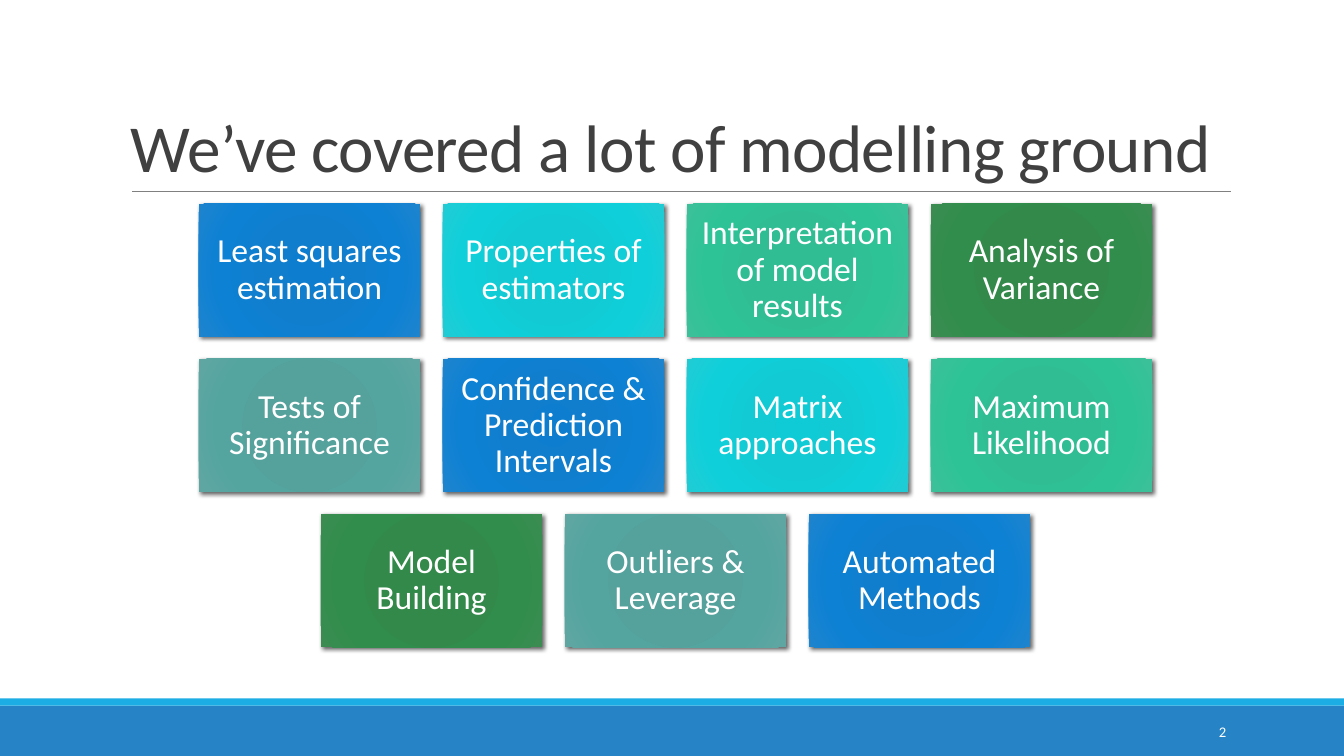
import pptx
import pptx.util
import pptx.dml.color
import pptx.enum.shapes
import pptx.enum.text
import pptx.oxml
import pptx.oxml.ns

Inches = pptx.util.Inches
RGBColor = pptx.dml.color.RGBColor
ALIGN = pptx.enum.text.PP_ALIGN
ANCHOR = pptx.enum.text.MSO_ANCHOR

# Content
HEADING = "We’ve covered a lot of modelling ground"
PAGE_NUMBER = "2"
TOPIC_ROWS = [
    ["Least squares estimation", "Properties of estimators",
     "Interpretation of model results", "Analysis of Variance"],
    ["Tests of Significance", "Confidence & Prediction Intervals",
     "Matrix approaches", "Maximum Likelihood"],
    ["Model Building", "Outliers & Leverage", "Automated Methods"],
]

# Colours: each tile has four gradient shades
FONT = "Calibri"
WHITE = RGBColor(0xFF, 0xFF, 0xFF)
HEADING_GREY = RGBColor(0x40, 0x40, 0x40)
RULE_GREY = RGBColor(0x80, 0x80, 0x80)
FOOTER_BLUE = RGBColor(0x26, 0x83, 0xC6)
STRIPE_BLUE = RGBColor(0x1C, 0xAD, 0xE4)
GRADIENT_STOPS = (0, 34, 70, 100)
TILE_GRADIENTS = [
    [RGBColor.from_string(shade) for shade in shades.split()]
    for shades in (
        "0D7ECF 117ECD 0D81D4 1E84CE",
        "0ECBD5 12CAD3 0FD0DA 20CBD4",
        "2DBE94 30BD94 2EC397 3CC09A",
        "2F8949 32894A 318D4B 3A8C51",
        "52A19C 55A19C 54A5A0 5FA6A2",
    )
]

# Grid, in inches
SLIDE_W, SLIDE_H = 13.33, 7.5
TILE_W, TILE_H, GAP = 2.2, 1.32, 0.22
GRID_CENTRE, GRID_TOP = 6.7, 2.02
FOOTER_H, STRIPE_H = 0.5, 0.07

XMLNS = pptx.oxml.ns.nsdecls("a")
qn = pptx.oxml.ns.qn

deck = pptx.Presentation()
deck.slide_width, deck.slide_height = Inches(SLIDE_W), Inches(SLIDE_H)
slide = deck.slides.add_slide(deck.slide_layouts[6])


def add_rect(left, top, width, height):
    rect = slide.shapes.add_shape(
        pptx.enum.shapes.MSO_SHAPE.RECTANGLE,
        Inches(left), Inches(top), Inches(width), Inches(height))
    rect.line.fill.background()
    rect.shadow.inherit = False
    return rect


def add_textbox(left, top, width, height):
    return slide.shapes.add_textbox(
        Inches(left), Inches(top), Inches(width), Inches(height))


def write(shape, text, size, color, align, anchor, line_spacing=1.0):
    frame = shape.text_frame
    frame.word_wrap = True
    frame.vertical_anchor = anchor
    paragraph = frame.paragraphs[0]
    paragraph.alignment = align
    paragraph.line_spacing = line_spacing
    run = paragraph.add_run()
    run.text = text
    run.font.size = pptx.util.Pt(size)
    run.font.name = FONT
    run.font.color.rgb = color


def add_tile(left, top, topic, shades):
    tile = add_rect(left, top, TILE_W, TILE_H)
    properties = tile.element.spPr
    stops = "".join(
        f'<a:gs pos="{stop * 1000}"><a:srgbClr val="{shade}"/></a:gs>'
        for stop, shade in zip(GRADIENT_STOPS, shades))
    properties.find(qn("a:ln")).addprevious(pptx.oxml.parse_xml(
        f'<a:gradFill {XMLNS} rotWithShape="1"><a:gsLst>{stops}</a:gsLst>'
        '<a:path path="circle"><a:fillToRect l="100000" t="100000" '
        'r="100000" b="100000"/></a:path></a:gradFill>'))
    properties.find(qn("a:effectLst")).append(pptx.oxml.parse_xml(
        f'<a:outerShdw {XMLNS} blurRad="38100" dist="25400" dir="2700000" '
        'algn="br" rotWithShape="0"><a:srgbClr val="000000">'
        '<a:alpha val="60000"/></a:srgbClr></a:outerShdw>'))
    frame = tile.text_frame
    frame.margin_left = frame.margin_right = Inches(0.1)
    frame.margin_top = frame.margin_bottom = Inches(0.1)
    write(tile, topic, 24, WHITE, ALIGN.CENTER, ANCHOR.MIDDLE, 0.9)


# Footer bands
footer_top = SLIDE_H - FOOTER_H
for top, height, color in ((footer_top, FOOTER_H, FOOTER_BLUE),
                           (footer_top - STRIPE_H, STRIPE_H, STRIPE_BLUE)):
    band = add_rect(0, top, SLIDE_W, height)
    band.fill.solid()
    band.fill.fore_color.rgb = color

# Heading, slightly tightened, and the rule below it
rule = slide.shapes.add_connector(
    pptx.enum.shapes.MSO_CONNECTOR.STRAIGHT,
    Inches(1.31), Inches(1.9), Inches(12.21), Inches(1.9))
rule.line.color.rgb = RULE_GREY
rule.line.width = pptx.util.Pt(0.5)
rule.element.spPr.append(pptx.oxml.parse_xml(f"<a:effectLst {XMLNS}/>"))

heading = add_textbox(1.2, 0.31, 11, 1.59)
write(heading, HEADING, 48, HEADING_GREY, ALIGN.LEFT, ANCHOR.BOTTOM, 0.85)
for run_properties in heading.element.iter(qn("a:rPr")):
    run_properties.set("spc", "-50")

# Topic tiles: every row is centred, gradients cycle through the tiles
tile_index = 0
for row, topics in enumerate(TOPIC_ROWS):
    row_width = len(topics) * (TILE_W + GAP) - GAP
    for column, topic in enumerate(topics):
        add_tile(GRID_CENTRE - row_width / 2 + column * (TILE_W + GAP),
                 GRID_TOP + row * (TILE_H + GAP),
                 topic, TILE_GRADIENTS[tile_index % len(TILE_GRADIENTS)])
        tile_index += 1

# Page number
write(add_textbox(10.83, 7.06, 1.43, 0.4), PAGE_NUMBER, 10.5, WHITE,
      ALIGN.RIGHT, ANCHOR.MIDDLE)

deck.save("out.pptx")
